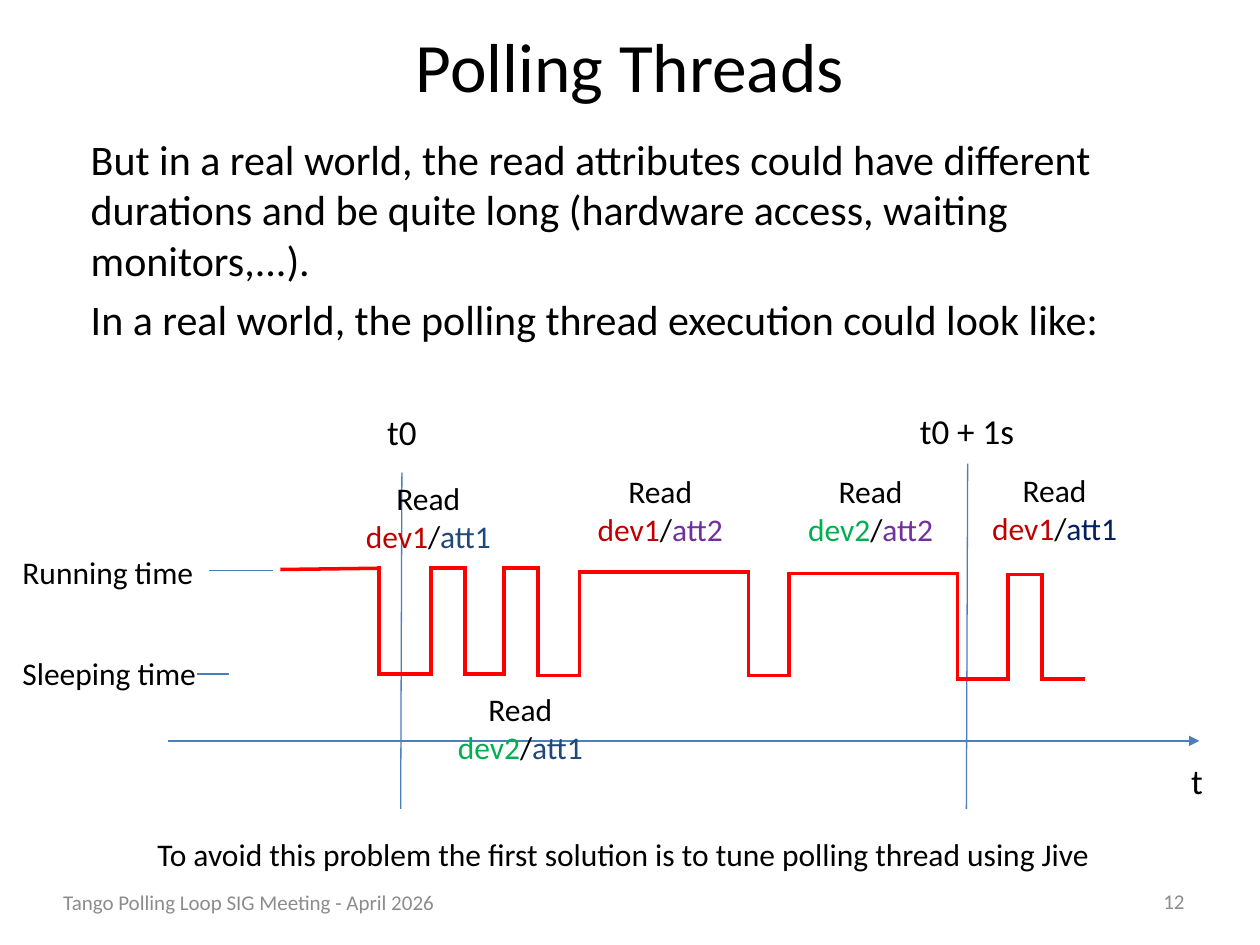
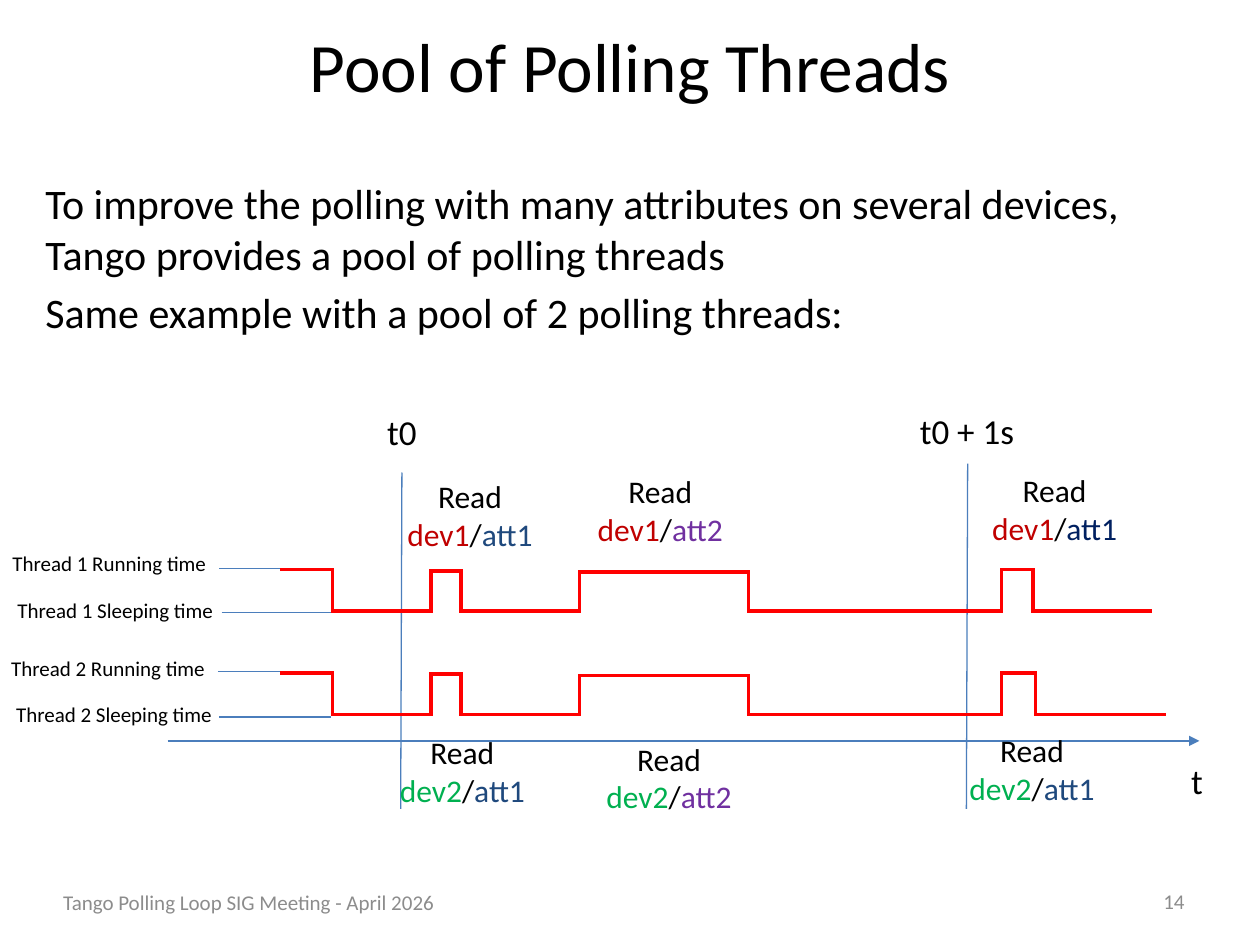
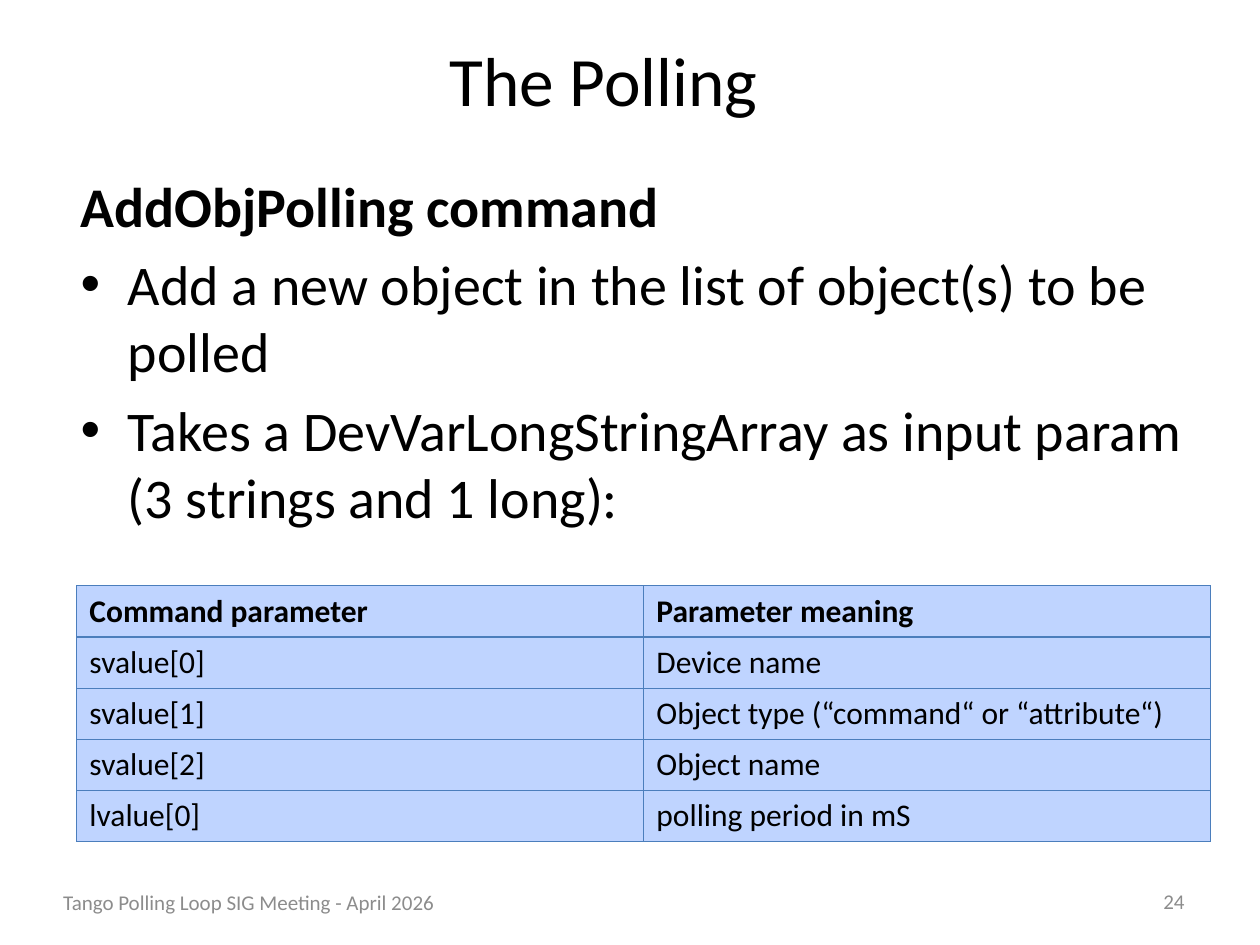
from dataclasses import dataclass
from itertools import pairwise

from lxml.etree import SubElement
from pptx import Presentation
from pptx.dml.color import RGBColor
from pptx.enum.shapes import MSO_CONNECTOR
from pptx.enum.text import MSO_ANCHOR, MSO_AUTO_SIZE, PP_ALIGN
from pptx.oxml.ns import qn
from pptx.slide import Slide
from pptx.util import Inches, Pt

BLACK = RGBColor(0, 0, 0)
GREY = RGBColor(0x8C, 0x8C, 0x8C)
BLUE = RGBColor(0x4B, 0x7E, 0xBC)
RED = RGBColor(0xFF, 0, 0)
DARK_RED = RGBColor(0xC0, 0, 0)
GREEN = RGBColor(0, 0xB0, 0x50)
PURPLE = RGBColor(0x70, 0x30, 0xA0)
SLATE = RGBColor(0x1F, 0x49, 0x7D)
NAVY = RGBColor(0, 0x20, 0x60)
CELL_FILL = RGBColor(0xBF, 0xD4, 0xFF)

FONT = "Calibri"
FOOTER = "Tango Polling Loop SIG Meeting - April 2026"
DEVICE_COLOURS = {"dev1": DARK_RED, "dev2": GREEN}
ATTRIBUTE_COLOURS = {"att1": SLATE, "att2": PURPLE}

Point = tuple[float, float]


@dataclass
class Box:
    left: float
    top: float
    width: float
    height: float

    def lengths(self) -> list[Inches]:
        return [Inches(value) for value in (self.left, self.top, self.width, self.height)]


@dataclass
class Line:
    start: Point
    end: Point
    colour: RGBColor = BLUE
    width: float = 0.75
    arrow: bool = False


@dataclass
class Label:
    text: str
    box: Box
    size: float
    align: PP_ALIGN = PP_ALIGN.LEFT
    colour: RGBColor = BLACK
    wrap: bool = True
    anchor: MSO_ANCHOR = MSO_ANCHOR.TOP
    fit: MSO_AUTO_SIZE = MSO_AUTO_SIZE.SHAPE_TO_FIT_TEXT


@dataclass
class ReadLabel:
    left: float
    top: float
    device: str
    attribute: str
    attribute_colour: RGBColor | None = None


@dataclass
class BodyLine:
    text: str
    bullet: bool = False
    bold: bool = False


def format_font(font, size: float, colour: RGBColor = BLACK, bold: bool = False) -> None:
    for name, value in {"name": FONT, "size": Pt(size), "bold": bold}.items():
        setattr(font, name, value)
    font.color.rgb = colour


def place(shape, box: Box) -> None:
    for name, value in zip(("left", "top", "width", "height"), box.lengths()):
        setattr(shape, name, value)


def add_label(slide: Slide, label: Label) -> None:
    frame = slide.shapes.add_textbox(*label.box.lengths()).text_frame
    frame_format = {
        "word_wrap": label.wrap,
        "auto_size": label.fit,
        "vertical_anchor": label.anchor,
    }
    for name, value in frame_format.items():
        setattr(frame, name, value)
    paragraph = frame.paragraphs[0]
    paragraph.alignment = label.align
    run = paragraph.add_run()
    run.text = label.text
    format_font(run.font, label.size, label.colour)


def add_read_label(slide: Slide, label: ReadLabel) -> None:
    box = Box(label.left, label.top, 1.2, 0.71)
    frame = slide.shapes.add_textbox(*box.lengths()).text_frame
    frame.word_wrap = True
    frame.auto_size = MSO_AUTO_SIZE.SHAPE_TO_FIT_TEXT
    paragraph = frame.paragraphs[0]
    paragraph.alignment = PP_ALIGN.CENTER
    parts = (
        ("Read ", BLACK),
        (label.device, DEVICE_COLOURS[label.device]),
        ("/", BLACK),
        (label.attribute, label.attribute_colour or ATTRIBUTE_COLOURS[label.attribute]),
    )
    for text, colour in parts:
        run = paragraph.add_run()
        run.text = text
        format_font(run.font, 18, colour)


def add_line(slide: Slide, line: Line) -> None:
    ends = [Inches(value) for value in (*line.start, *line.end)]
    connector = slide.shapes.add_connector(MSO_CONNECTOR.STRAIGHT, *ends)
    connector.line.color.rgb = line.colour
    connector.line.width = Pt(line.width)
    properties = connector._element.spPr
    outline = properties.find(qn("a:ln"))
    if line.colour == RED:
        outline.set("cap", "sq")
    if line.arrow:
        SubElement(outline, qn("a:tailEnd"), type="triangle")
    SubElement(properties, qn("a:effectLst"))


def add_trace(slide: Slide, points: list[Point]) -> None:
    for start, end in pairwise(points):
        add_line(slide, Line(start, end, RED, 2))


def thread_trace(top: float, last_fall: float, end: float) -> list[Point]:
    low = 0.33
    steps = [
        (2.24, 0), (2.64, 0), (2.64, low), (3.42, low), (3.42, 0.01), (3.66, 0.01),
        (3.66, low), (4.6, low), (4.6, 0.02), (5.94, 0.02), (5.94, low), (7.95, low),
        (7.95, 0), (last_fall, 0), (last_fall, low), (end, low),
    ]
    return [(x, top + drop) for x, drop in steps]


def add_time_axes(slide: Slide) -> None:
    add_line(slide, Line((1.33, 5.88), (9.52, 5.88), arrow=True))
    add_line(slide, Line((3.19, 3.75), (3.18, 6.42)))
    add_line(slide, Line((7.68, 3.68), (7.67, 6.42)))
    for text, box in (
        ("t0", Box(2.73, 3.21, 0.92, 0.44)),
        ("t0 + 1s", Box(7.04, 3.2, 1.27, 0.44)),
        ("t", Box(9.04, 5.98, 0.92, 0.44)),
    ):
        add_label(slide, Label(text, box, 20, PP_ALIGN.CENTER))


def add_body(slide: Slide, box: Box, size: float, lines: list[BodyLine]) -> None:
    body = slide.placeholders[1]
    place(body, box)
    frame = body.text_frame
    frame.auto_size = MSO_AUTO_SIZE.NONE
    for index, line in enumerate(lines):
        paragraph = frame.add_paragraph() if index else frame.paragraphs[0]
        paragraph.text = line.text
        paragraph.space_before = Pt(size * 0.2 if index else 0)
        if not line.bullet:
            properties = paragraph._p.get_or_add_pPr()
            properties.set("marL", "0")
            properties.set("indent", "0")
            SubElement(properties, qn("a:buNone"))
        for run in paragraph.runs:
            format_font(run.font, size, bold=line.bold)


def start_slide(presentation, title: str, number: int, title_box: Box) -> Slide:
    slide = presentation.slides.add_slide(presentation.slide_layouts[1])
    heading = slide.shapes.title
    place(heading, title_box)
    frame = heading.text_frame
    frame.text = title
    frame.auto_size = MSO_AUTO_SIZE.NONE
    frame.vertical_anchor = MSO_ANCHOR.MIDDLE
    frame.paragraphs[0].alignment = PP_ALIGN.CENTER
    format_font(frame.paragraphs[0].runs[0].font, 39.6)
    for text, box, align in (
        (str(number), Box(7.17, 6.95, 2.33, 0.4), PP_ALIGN.RIGHT),
        (FOOTER, Box(0.2, 6.96, 3.55, 0.4), PP_ALIGN.CENTER),
    ):
        add_label(slide, Label(text, box, 12, align, GREY,
                               anchor=MSO_ANCHOR.MIDDLE, fit=MSO_AUTO_SIZE.NONE))
    return slide


def add_border(cell) -> None:
    properties = cell._tc.get_or_add_tcPr()
    for position, side in enumerate(("lnL", "lnR", "lnT", "lnB")):
        border = SubElement(properties, qn(f"a:{side}"), w=str(Pt(0.75)))
        properties.insert(position, border)
        fill = SubElement(border, qn("a:solidFill"))
        SubElement(fill, qn("a:srgbClr"), val=str(BLUE))


def add_parameter_table(slide: Slide, rows: list[tuple[str, str]]) -> None:
    box = Box(0.61, 4.65, 9, 2)
    table = slide.shapes.add_table(len(rows), 2, *box.lengths()).table
    for row_index, row in enumerate(rows):
        for column_index, text in enumerate(row):
            cell = table.cell(row_index, column_index)
            cell.text = text
            cell.vertical_anchor = MSO_ANCHOR.MIDDLE
            cell.fill.solid()
            cell.fill.fore_color.rgb = CELL_FILL
            add_border(cell)
            run = cell.text_frame.paragraphs[0].runs[0]
            format_font(run.font, 18, bold=row_index == 0)


def build_polling_threads(presentation) -> None:
    slide = start_slide(presentation, "Polling Threads", 12, Box(0.75, 0.14, 8.5, 0.75))
    add_body(slide, Box(0.62, 1.01, 9, 1.99), 24, [
        BodyLine("But in a real world, the read attributes could have different durations "
                 "and be quite long (hardware access, waiting monitors,...)."),
        BodyLine("In a real world, the polling thread execution could look like:"),
    ])
    add_time_axes(slide)
    for text, top, start, end in (
        ("Sleeping time", 5.14, (1.82, 5.35), (1.56, 5.35)),
        ("Running time", 4.34, (1.66, 4.53), (2.17, 4.53)),
    ):
        add_label(slide, Label(text, Box(0.08, top, 1.83, 0.4), 18))
        add_line(slide, Line(start, end))
    for label in (
        ReadLabel(2.8, 3.75, "dev1", "att1"),
        ReadLabel(3.53, 5.43, "dev2", "att1"),
        ReadLabel(6.31, 3.7, "dev2", "att2"),
        ReadLabel(4.64, 3.7, "dev1", "att2"),
        ReadLabel(7.77, 3.69, "dev1", "att1", NAVY),
    ):
        add_read_label(slide, label)
    add_trace(slide, [
        (2.24, 4.52), (3.01, 4.51), (3.01, 5.35), (3.42, 5.35), (3.42, 4.51), (3.69, 4.51),
        (3.69, 5.35), (4, 5.35), (4, 4.51), (4.27, 4.51), (4.27, 5.36), (4.6, 5.36),
        (4.6, 4.54), (5.94, 4.54), (5.94, 5.36), (6.26, 5.36), (6.26, 4.55), (7.6, 4.55),
        (7.6, 5.39), (8, 5.39), (8, 4.56), (8.27, 4.56), (8.27, 5.39), (8.6, 5.39),
    ])
    add_label(slide, Label(
        "To avoid this problem the first solution is to tune polling thread using Jive",
        Box(1.15, 6.58, 7.7, 0.4), 18, wrap=False))


def build_thread_pool(presentation) -> None:
    slide = start_slide(presentation, "Pool of Polling Threads", 14, Box(0.75, 0.14, 8.5, 0.75))
    add_body(slide, Box(0.26, 1.36, 9, 1.41), 24, [
        BodyLine("To improve the polling with many attributes on several devices, "
                 "Tango provides a pool of polling threads"),
        BodyLine("Same example with a pool of 2 polling threads:"),
    ])
    add_time_axes(slide)
    for text, left, top, start, end in (
        ("Thread 1 Running time", 0, 4.32, (1.74, 4.51), (2.24, 4.51)),
        ("Thread 1 Sleeping time", 0.04, 4.69, (1.76, 4.86), (2.64, 4.86)),
        ("Thread 2 Running time", -0.01, 5.15, (1.73, 5.33), (2.23, 5.33)),
        ("Thread 2 Sleeping time", 0.03, 5.52, (1.74, 5.69), (2.63, 5.69)),
    ):
        add_label(slide, Label(text, Box(left, top, 1.83, 0.3), 12))
        add_line(slide, Line(start, end))
    add_trace(slide, thread_trace(4.52, 8.2, 9.13))
    add_trace(slide, thread_trace(5.34, 8.22, 9.24))
    for label in (
        ReadLabel(3.13, 3.74, "dev1", "att1"),
        ReadLabel(3.07, 5.77, "dev2", "att1"),
        ReadLabel(4.64, 3.7, "dev1", "att2"),
        ReadLabel(7.77, 3.69, "dev1", "att1", NAVY),
        ReadLabel(4.71, 5.82, "dev2", "att2"),
        ReadLabel(7.59, 5.75, "dev2", "att1"),
    ):
        add_read_label(slide, label)


def build_polling_command(presentation) -> None:
    slide = start_slide(presentation, "The Polling", 24, Box(0.54, 0.25, 8.5, 0.75))
    add_body(slide, Box(0.54, 1.31, 9.35, 5), 32, [
        BodyLine("AddObjPolling command", bold=True),
        BodyLine("Add a new object in the list of object(s) to be polled", bullet=True),
        BodyLine("Takes a DevVarLongStringArray as input param\v(3 strings and 1 long):",
                 bullet=True),
    ])
    add_parameter_table(slide, [
        ("Command parameter", "Parameter meaning"),
        ("svalue[0]", "Device name"),
        ("svalue[1]", "Object type (“command“ or “attribute“)"),
        ("svalue[2]", "Object name"),
        ("lvalue[0]", "polling period in mS"),
    ])


def main() -> None:
    presentation = Presentation()
    presentation.slide_width = Inches(10)
    presentation.slide_height = Inches(7.5)
    build_polling_threads(presentation)
    build_thread_pool(presentation)
    build_polling_command(presentation)
    presentation.save("out.pptx")


if __name__ == "__main__":
    main()
